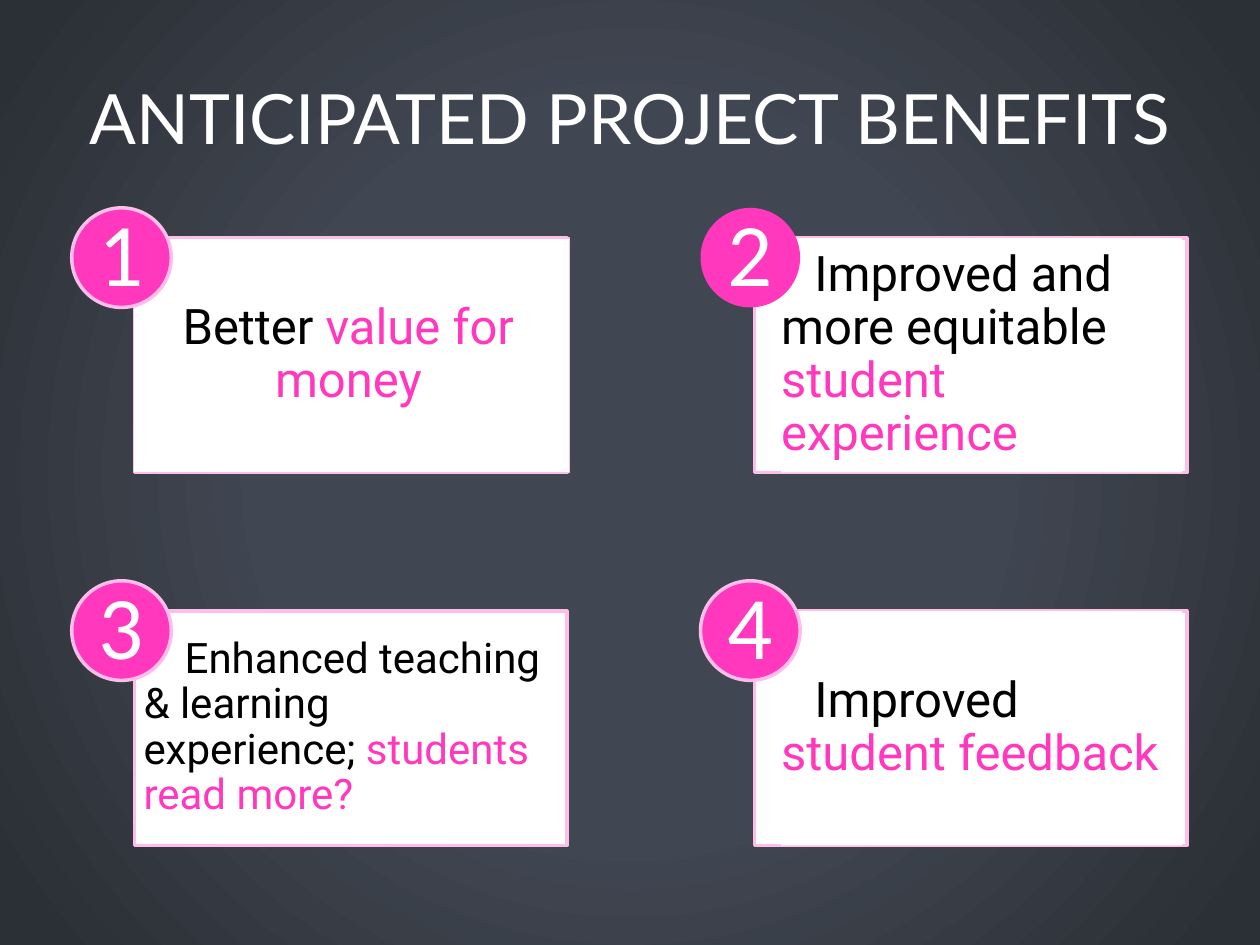
from dataclasses import dataclass
from typing import Optional

from lxml import etree
from pptx import Presentation
from pptx.dml.color import RGBColor
from pptx.enum.shapes import MSO_SHAPE as Shape
from pptx.enum.text import MSO_ANCHOR as Anchor, PP_ALIGN as Align
from pptx.oxml.ns import qn
from pptx.util import Pt

COLORS = {
    "white": "FFFFFF",
    "black": "000000",
    "pink": "FF38BE",
    "rim": "FFBDE9",
    "slate": "414752",
    "dark": "2B2F36",
}
GRADIENT = [(0, "slate"), (46, "slate"), (95, "dark")]

CARD_W, CARD_H = 247, 133.9
CARD_X, CARD_Y = (77, 431.3), (136.1, 349.2)
BADGE_X, BADGE_RISE, BADGE_SIZE = (41, 400.3), 17.3, 56.9


@dataclass
class Panel:
    dx: float
    dy: float
    w: float
    h: float
    rim: float = 0


@dataclass
class Benefit:
    plain: str
    accent: str
    panel: Panel
    size: float = 28
    indent: float = 0
    align: Align = Align.LEFT
    badge_rim: float = 2


RIGHT_PANEL = Panel(15.1, 0, 229, CARD_H)
BENEFITS = [
    Benefit("Better ", "value for money", Panel(-0.7, 0, 249.1, CARD_H, 0.75),
            align=Align.CENTER),
    Benefit("Improved and more equitable ", "student experience", RIGHT_PANEL,
            indent=19, badge_rim=0),
    Benefit("Enhanced teaching & learning experience; ", "students read more?",
            Panel(5, 5.8, 231.8, 121.7), size=24, indent=23.5),
    Benefit("Improved ", "student feedback", RIGHT_PANEL, indent=19),
]


def rgb(name: str) -> RGBColor:
    return RGBColor.from_string(COLORS[name])


def apply(target, values: dict) -> None:
    for name, value in values.items():
        setattr(target, name, value)


def paint_background(s) -> None:
    fill = s.background.fill
    fill.solid()
    props = s._element.find(".//" + qn("p:bgPr"))
    grad = etree.Element(qn("a:gradFill"), rotWithShape="1")
    stops = etree.SubElement(grad, qn("a:gsLst"))
    for pos, color in GRADIENT:
        stop = etree.SubElement(stops, qn("a:gs"), pos=str(pos * 1000))
        etree.SubElement(stop, qn("a:srgbClr"), val=COLORS[color])
    circle = etree.SubElement(grad, qn("a:path"), {"path": "circle"})
    etree.SubElement(circle, qn("a:fillToRect"),
                     {side: "50000" for side in "ltrb"})
    props.replace(props.find(qn("a:solidFill")), grad)


def add_shape(s, kind: Shape, box: tuple, fill: str, rim: float):
    sp = s.shapes.add_shape(kind, *(Pt(v) for v in box))
    sp.shadow.inherit = False
    sp.fill.solid()
    sp.fill.fore_color.rgb = rgb(fill)
    if rim:
        sp.line.color.rgb = rgb("rim")
        sp.line.width = Pt(rim)
    else:
        sp.line.fill.background()
    return sp


def write(sp, runs: list, font: str, size: float, align: Align,
          pad: float = 0, indent: float = 0) -> None:
    tf = sp.text_frame
    apply(tf, {"word_wrap": True, "vertical_anchor": Anchor.MIDDLE,
               "margin_left": 0, "margin_right": Pt(pad),
               "margin_top": Pt(pad), "margin_bottom": Pt(pad)})
    p = tf.paragraphs[0]
    apply(p, {"alignment": align, "line_spacing": 0.9})
    if indent:
        p._p.get_or_add_pPr().set("indent", str(Pt(indent)))
    for text, color in runs:
        r = p.add_run()
        r.text = text
        apply(r.font, {"name": font, "size": Pt(size)})
        r.font.color.rgb = rgb(color)


def add_title(s, text: str) -> None:
    sp = s.shapes.title
    apply(sp, {"left": Pt(36), "top": Pt(21.6),
               "width": Pt(648), "height": Pt(90)})
    tf = sp.text_frame
    apply(tf, {"text": text, "word_wrap": True,
               "vertical_anchor": Anchor.MIDDLE})
    p = tf.paragraphs[0]
    p.alignment = Align.CENTER
    r = p.runs[0]
    apply(r.font, {"name": "Lato", "size": Pt(39.6)})
    r.font.color.rgb = rgb("white")


def add_benefit(s, index: int, item: Benefit) -> None:
    row, col = divmod(index, 2)
    x, y = CARD_X[col], CARD_Y[row]
    add_shape(s, Shape.RECTANGLE, (x, y, CARD_W, CARD_H), "white", 2)

    area = item.panel
    panel = add_shape(s, Shape.RECTANGLE,
                      (x + area.dx, y + area.dy, area.w, area.h),
                      "white", area.rim)
    write(panel, [(item.plain, "black"), (item.accent, "pink")], "Roboto",
          item.size, item.align, 3.6, item.indent)

    badge = add_shape(s, Shape.OVAL,
                      (BADGE_X[col], y - BADGE_RISE, BADGE_SIZE, BADGE_SIZE),
                      "pink", item.badge_rim)
    write(badge, [(str(index + 1), "white")], "Calibri", 51, Align.CENTER)


def main() -> None:
    prs = Presentation()
    apply(prs, {"slide_width": Pt(720), "slide_height": Pt(540)})
    s = prs.slides.add_slide(prs.slide_layouts[5])
    paint_background(s)
    add_title(s, "ANTICIPATED PROJECT BENEFITS")
    for index, item in enumerate(BENEFITS):
        add_benefit(s, index, item)
    prs.save("out.pptx")


if __name__ == "__main__":
    main()
